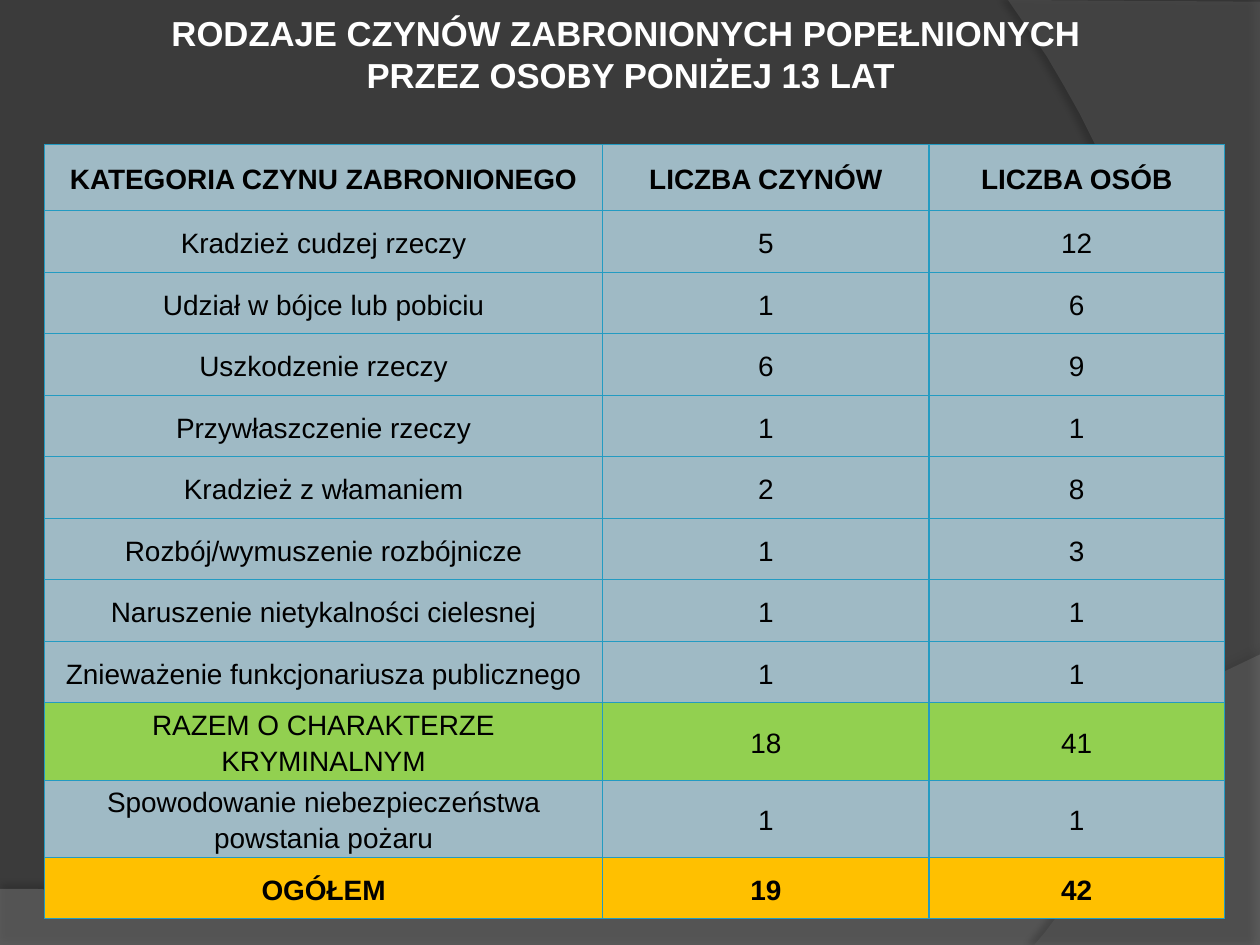
"""Build a slide with a table of acts by persons under 13."""
from dataclasses import dataclass

from lxml.etree import SubElement
from pptx import Presentation
from pptx.dml.color import RGBColor
from pptx.enum.text import MSO_ANCHOR, PP_ALIGN
from pptx.oxml.ns import qn
from pptx.util import Pt

CENTER = PP_ALIGN.CENTER
MIDDLE = MSO_ANCHOR.MIDDLE
TOP = MSO_ANCHOR.TOP
FONT = "Arial"
COLORS = {
    "back": "3B3B3B", "wave": "7F7F7F", "arc": "5E5E5E", "shade": "000000",
    "title": "FFFFFF", "text": "000000", "edge": "239BC2",
    "plain": "9FBAC5", "sum": "92D050", "total": "FFC000",
}
TITLE = "RODZAJE CZYNÓW ZABRONIONYCH POPEŁNIONYCH \vPRZEZ OSOBY PONIŻEJ 13 LAT"
WIDTHS = (319, 186.5, 168.8)


@dataclass
class Row:
    """One table row."""
    label: str
    acts: str
    people: str
    height: float = 35.15
    fill: str = "plain"
    bold: bool = False


@dataclass
class Swoosh:
    """A background outline closed by one Bezier curve."""
    start: list
    curve: list
    fill: str
    alpha: int
    shade: int
    dist: float
    angle: int


ROWS = [
    Row("KATEGORIA CZYNU ZABRONIONEGO", "LICZBA CZYNÓW", "LICZBA OSÓB", 37.7, bold=True),
    Row("Kradzież cudzej rzeczy", "5", "12"),
    Row("Udział w bójce lub pobiciu", "1", "6"),
    Row("Uszkodzenie rzeczy", "6", "9"),
    Row("Przywłaszczenie rzeczy", "1", "1"),
    Row("Kradzież z włamaniem", "2", "8"),
    Row("Rozbój/wymuszenie rozbójnicze", "1", "3"),
    Row("Naruszenie nietykalności cielesnej", "1", "1"),
    Row("Znieważenie funkcjonariusza publicznego", "1", "1"),
    Row("RAZEM O CHARAKTERZE KRYMINALNYM", "18", "41", 41.4, "sum"),
    Row("Spowodowanie niebezpieczeństwa powstania pożaru", "1", "1", 41.4),
    Row("OGÓŁEM", "19", "42", fill="total", bold=True),
]
WAVES = [
    Swoosh([(0, 507.6), (0, 540), (720, 540)],
           [(720, 374.4), (402.5, 524.9), (281.5, 517.7), (0, 507.6)],
           "wave", 45, 35, 3.5, 270),
    Swoosh([(720, 1.4), (720, 540)],
           [(591.1, 540), (673.2, 445.7), (733, 216), (576, 0)],
           "arc", 40, 45, 4, 180),
]


def paint(fill, name: str) -> None:
    """Fill with a solid named colour."""
    fill.solid()
    fill.fore_color.rgb = RGBColor.from_string(COLORS[name])


def bezier(points: list, steps: int = 40) -> list:
    """Return points along a cubic Bezier curve."""
    def blend(t: float, axis: int) -> float:
        a, b, c, d = (p[axis] for p in points)
        u = 1 - t
        return u**3 * a + 3 * u * u * t * b + 3 * u * t * t * c + t**3 * d
    return [(blend(i / steps, 0), blend(i / steps, 1)) for i in range(steps + 1)]


def draw_wave(slide, wave: Swoosh) -> None:
    """Draw a translucent outline with a soft shadow."""
    first, *rest = wave.start + bezier(wave.curve)
    path = slide.shapes.build_freeform(*first, scale=float(Pt(1)))
    path.add_line_segments(rest, close=True)
    shape = path.convert_to_shape()
    shape.line.fill.background()
    paint(shape.fill, wave.fill)
    shape.shadow.inherit = False
    props = shape.element.spPr
    tint = props.find(qn("a:solidFill"))[0]
    SubElement(tint, qn("a:alpha"), val=str(wave.alpha * 1000))
    glow = SubElement(props.find(qn("a:effectLst")), qn("a:outerShdw"),
                      blurRad=str(Pt(4)), dist=str(Pt(wave.dist)),
                      dir=str(wave.angle * 60000), algn="ctr", rotWithShape="0")
    shade = SubElement(glow, qn("a:srgbClr"), val=COLORS["shade"])
    SubElement(shade, qn("a:alpha"), val=str(wave.shade * 1000))


def style(frame, size: float, color: str, bold: bool, space: float) -> None:
    """Format all text in a frame."""
    for para in frame.paragraphs:
        para.alignment = CENTER
        para.line_spacing = space
        for run in para.runs:
            run.font.name = FONT
            run.font.size = Pt(size)
            run.font.bold = bold
            run.font.color.rgb = RGBColor.from_string(COLORS[color])


def draw_title(slide) -> None:
    """Draw the heading."""
    frame = slide.shapes.add_textbox(Pt(36.7), Pt(7), Pt(647.3), Pt(46)).text_frame
    frame.word_wrap = True
    frame.vertical_anchor = TOP
    frame.margin_top = frame.margin_bottom = 0
    frame.margin_left = frame.margin_right = Pt(3.6)
    frame.text = TITLE
    style(frame, 19.8, "title", True, 1.0)


def draw_cell(cell, text: str, row: Row) -> None:
    """Write and format one table cell."""
    cell.text_frame.text = text
    style(cell.text_frame, 16, "text", row.bold, 1.15)
    cell.vertical_anchor = MIDDLE
    cell.margin_left = cell.margin_right = Pt(5)
    cell.margin_top = cell.margin_bottom = 0
    props = cell._tc.get_or_add_tcPr()
    for side in "LRTB":
        line = SubElement(props, qn(f"a:ln{side}"), w=str(Pt(0.75)))
        SubElement(SubElement(line, qn("a:solidFill")), qn("a:srgbClr"), val=COLORS["edge"])
    paint(cell.fill, row.fill)


def draw_table(slide) -> None:
    """Draw the table of acts."""
    high = sum(row.height for row in ROWS)
    table = slide.shapes.add_table(len(ROWS), len(WIDTHS), Pt(25.4), Pt(82.8),
                                   Pt(sum(WIDTHS)), Pt(high)).table
    for col, width in zip(table.columns, WIDTHS):
        col.width = Pt(width)
    for line, row in zip(table.rows, ROWS):
        line.height = Pt(row.height)
        for cell, text in zip(line.cells, (row.label, row.acts, row.people)):
            draw_cell(cell, text, row)


def main() -> None:
    """Build and save the slide."""
    deck = Presentation()
    deck.slide_width, deck.slide_height = Pt(720), Pt(540)
    slide = deck.slides.add_slide(deck.slide_layouts[6])
    paint(slide.background.fill, "back")
    for wave in WAVES:
        draw_wave(slide, wave)
    draw_title(slide)
    draw_table(slide)
    deck.save("out.pptx")


if __name__ == "__main__":
    main()
